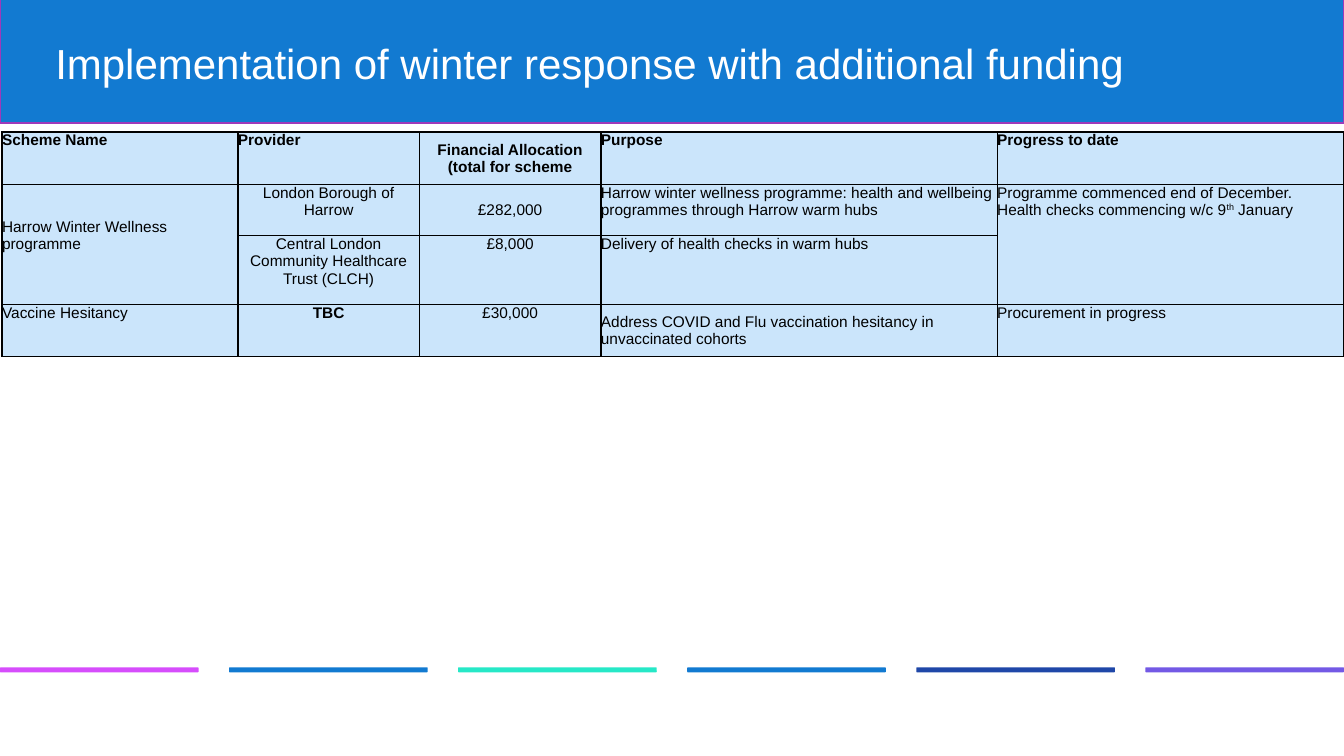
import pptx
import pptx.util
import pptx.dml.color
import pptx.enum.shapes
import pptx.enum.text
import pptx.oxml
import pptx.oxml.ns

Inches = pptx.util.Inches
Pt = pptx.util.Pt
MIDDLE = pptx.enum.text.MSO_ANCHOR.MIDDLE
CENTER = pptx.enum.text.PP_ALIGN.CENTER
LEFT = pptx.enum.text.PP_ALIGN.LEFT


def color(value):
    return pptx.dml.color.RGBColor.from_string(value)


def add_block(kind, left, top, width, height, fill):
    block = slide.shapes.add_shape(
        kind, Inches(left), Inches(top), Inches(width), Inches(height))
    block.shadow.inherit = False
    block.fill.solid()
    block.fill.fore_color.rgb = color(fill)
    block.line.fill.background()
    return block


deck = pptx.Presentation()
deck.slide_width = Inches(13.33)
deck.slide_height = Inches(7.5)
slide = deck.slides.add_slide(deck.slide_layouts[6])

shapes = pptx.enum.shapes.MSO_SHAPE
banner = add_block(shapes.RECTANGLE, 0, -0.03, 13.33, 1.25, "127AD1")
banner.line.color.rgb = color("9E39BA")
banner.line.width = Pt(1)

stripe_colors = ["D64DFC", "127AD1", "26E8C7", "127AD1", "1F47A8", "7359E5"]
stripe_width = 1.97
stripe_step = (13.33 - stripe_width) / (len(stripe_colors) - 1)
for position, stripe_color in enumerate(stripe_colors):
    stripe = add_block(shapes.ROUNDED_RECTANGLE, position * stripe_step, 6.62,
                       stripe_width, 0.05, stripe_color)

title = slide.shapes.add_textbox(
    Inches(0.45), Inches(0.36), Inches(12.44), Inches(0.59)).text_frame
title.word_wrap = True
title.vertical_anchor = MIDDLE
heading = title.paragraphs[0]
heading.text = "Implementation of winter response with additional funding"
heading.line_spacing = 0.9
heading.font.name = "Arial"
heading.font.size = Pt(30)
heading.font.color.rgb = color("FFFFFF")

scheme_rows = [
    ["Scheme Name", "Provider", "Financial Allocation (total for scheme",
     "Purpose", "Progress to date"],
    ["Harrow Winter Wellness programme", "London Borough of Harrow", "£282,000",
     "Harrow winter wellness programme: health and wellbeing programmes "
     "through Harrow warm hubs",
     "Programme commenced end of December.\vHealth checks commencing w/c 9"],
    ["", "Central London Community Healthcare Trust (CLCH)", "£8,000",
     "Delivery of health checks in warm hubs", ""],
    ["Vaccine Hesitancy", "TBC", "£30,000",
     "Address COVID and Flu vaccination hesitancy in unvaccinated cohorts",
     "Procurement in progress"],
]
column_widths = [2.34, 1.8, 1.8, 3.93, 3.44]
row_heights = [0.52, 0.51, 0.68, 0.52]
centered_columns = (1, 2)
middle_cells = [(0, 2), (1, 0), (1, 2), (3, 3)]
tbc_cell = (3, 1)

schemes = slide.shapes.add_table(
    len(row_heights), len(column_widths), Inches(0.02), Inches(1.31),
    Inches(sum(column_widths)), Inches(sum(row_heights))).table
schemes.first_row = False
schemes.horz_banding = False
for column, width in zip(schemes.columns, column_widths):
    column.width = Inches(width)
for row, height in zip(schemes.rows, row_heights):
    row.height = Inches(height)

for r, texts in enumerate(scheme_rows):
    for c, text in enumerate(texts):
        cell = schemes.cell(r, c)
        cell.margin_left = cell.margin_right = Inches(0)
        cell.margin_top = cell.margin_bottom = Inches(0)
        if (r, c) in middle_cells:
            cell.vertical_anchor = MIDDLE
        cell.fill.solid()
        cell.fill.fore_color.rgb = color("CBE5FB")
        entry = cell.text_frame.paragraphs[0]
        entry.text = text
        header_left = r == 0 and c == 1
        entry.alignment = CENTER if c in centered_columns and not header_left else LEFT
        entry.font.name = "Arial"
        entry.font.size = Pt(11)
        entry.font.bold = r == 0 or (r, c) == tbc_cell
        entry.font.color.rgb = color("000000")
        for order, side in enumerate(["lnL", "lnR", "lnT", "lnB"]):
            border = pptx.oxml.parse_xml(
                f'<a:{side} {pptx.oxml.ns.nsdecls("a")} w="12700"><a:solidFill>'
                f'<a:srgbClr val="000000"/></a:solidFill></a:{side}>')
            cell._tc.get_or_add_tcPr().insert(order, border)

progress = schemes.cell(1, 4).text_frame.paragraphs[0]
ordinal = progress.add_run()
ordinal.text = "th"
ordinal._r.get_or_add_rPr().set("baseline", "30000")
progress.add_run().text = " January"

for c in (0, 4):
    schemes.cell(1, c).merge(schemes.cell(2, c))
schemes.cell(1, 0).margin_bottom = Inches(0.17)

deck.save("out.pptx")
